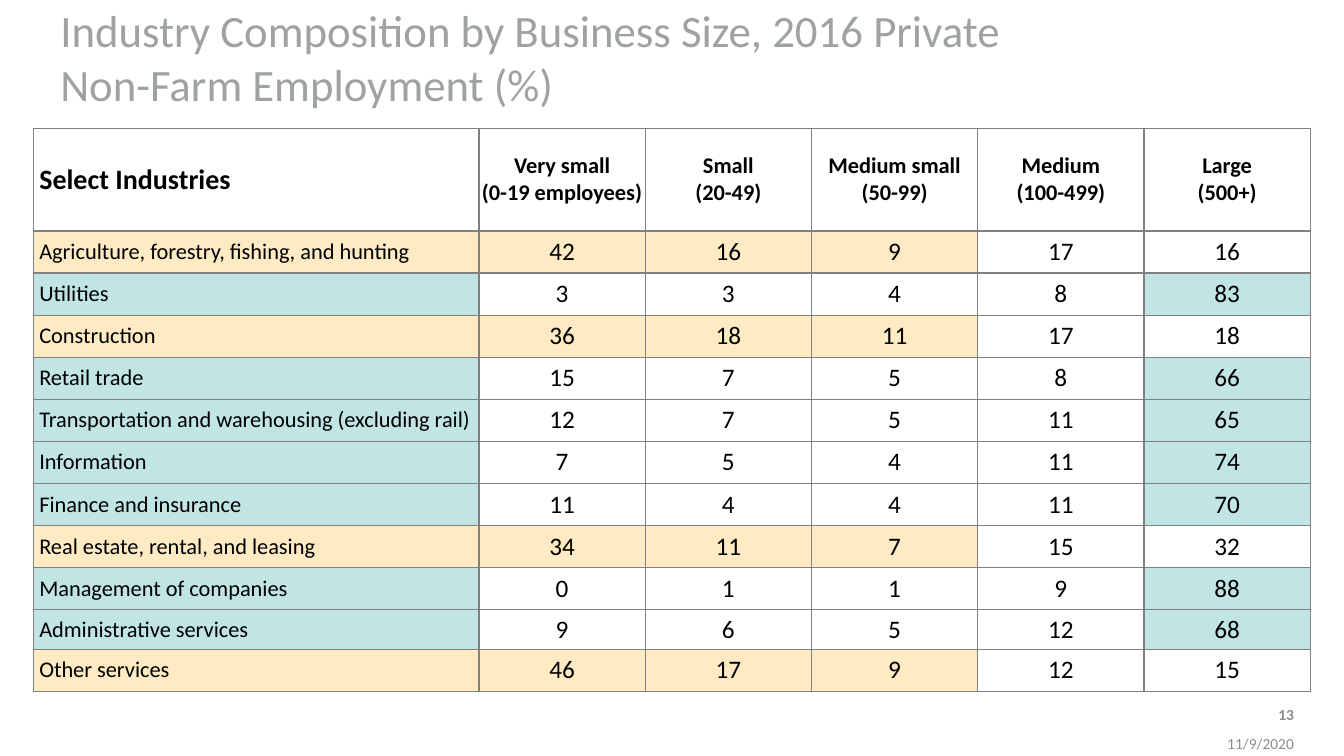
from dataclasses import dataclass

from lxml import etree
from pptx import Presentation
from pptx.dml.color import RGBColor
from pptx.enum import text
from pptx.oxml import ns
from pptx.util import Cm, Pt


@dataclass(frozen=True)
class Theme:
    font: str = "Calibri"
    title: str = "9EA2A2"
    footer: str = "8C8C8C"
    ink: str = "000000"
    border: str = "808080"
    plain: str = "FFFFFF"
    small_led: str = "FEEAC3"
    large_led: str = "C1E5E5"
    title_size: int = 32
    corner_size: int = 20
    label_size: int = 16
    value_size: int = 18
    footer_size: int = 11


THEME = Theme()
LEFT, CENTER, RIGHT = text.PP_ALIGN.LEFT, text.PP_ALIGN.CENTER, text.PP_ALIGN.RIGHT

HEADERS = ["Select Industries", "Very small\n(0-19 employees)", "Small\n(20-49)",
           "Medium small\n(50-99)", "Medium\n(100-499)", "Large\n(500+)"]
INDUSTRIES = [
    ("Agriculture, forestry, fishing, and hunting", 42, 16, 9, 17, 16),
    ("Utilities", 3, 3, 4, 8, 83),
    ("Construction", 36, 18, 11, 17, 18),
    ("Retail trade", 15, 7, 5, 8, 66),
    ("Transportation and warehousing (excluding rail)", 12, 7, 5, 11, 65),
    ("Information", 7, 5, 4, 11, 74),
    ("Finance and insurance", 11, 4, 4, 11, 70),
    ("Real estate, rental, and leasing", 34, 11, 7, 15, 32),
    ("Management of companies", 0, 1, 1, 9, 88),
    ("Administrative services", 9, 6, 5, 12, 68),
    ("Other services", 46, 17, 9, 12, 15),
]
COLUMN_WIDTHS = [11.23] + [4.19] * 5
ROW_HEIGHTS = [2.59] + [1.06] * 9 + [1.0, 1.06]


def write(tf, words, size, color, align=LEFT, bold=False):
    tf.text = words
    for p in tf.paragraphs:
        p.alignment = align
        for r in p.runs:
            r.font.name = THEME.font
            r.font.size = Pt(size)
            r.font.bold = bold
            r.font.color.rgb = RGBColor.from_string(color)


def add_text(s, box, words, size, color, align=LEFT, bold=False):
    tf = s.shapes.add_textbox(*map(Cm, box)).text_frame
    tf.word_wrap = True
    tf.vertical_anchor = text.MSO_ANCHOR.MIDDLE
    tf.margin_bottom = 0
    write(tf, words, size, color, align, bold)


def add_borders(cell):
    tc_pr = cell._tc.get_or_add_tcPr()
    for side in ("lnL", "lnR", "lnT", "lnB"):
        line = etree.SubElement(tc_pr, ns.qn(f"a:{side}"), w=str(Pt(1)))
        fill = etree.SubElement(line, ns.qn("a:solidFill"))
        etree.SubElement(fill, ns.qn("a:srgbClr"), val=THEME.border)


def fill_cell(cell, words, size, color, align, bold):
    add_borders(cell)
    cell.fill.solid()
    cell.fill.fore_color.rgb = RGBColor.from_string(color)
    cell.vertical_anchor = text.MSO_ANCHOR.MIDDLE
    cell.margin_left = Cm(0.15) if align == LEFT else 0
    cell.margin_right = cell.margin_top = cell.margin_bottom = 0
    write(cell.text_frame, words, size, THEME.ink, align, bold)


def highlight(row, column):
    """Shade the label and the size classes that lead an industry's employment."""
    if row[-1] > 50:
        return THEME.large_led if column in (0, 5) else THEME.plain
    return THEME.small_led if column <= 3 else THEME.plain


def add_industry_table(s):
    frame = s.shapes.add_table(len(ROW_HEIGHTS), len(COLUMN_WIDTHS), Cm(0.84), Cm(3.23),
                               Cm(sum(COLUMN_WIDTHS)), Cm(sum(ROW_HEIGHTS)))
    table = frame.table
    table.horz_banding = False
    for column, width in zip(table.columns, COLUMN_WIDTHS):
        column.width = Cm(width)
    for row, height in zip(table.rows, ROW_HEIGHTS):
        row.height = Cm(height)

    for j, header in enumerate(HEADERS):
        size = THEME.label_size if j else THEME.corner_size
        fill_cell(table.cell(0, j), header, size, THEME.plain, CENTER if j else LEFT, True)
    for i, industry in enumerate(INDUSTRIES, 1):
        for j, value in enumerate(industry):
            size = THEME.value_size if j else THEME.label_size
            fill_cell(table.cell(i, j), str(value), size, highlight(industry, j),
                      CENTER if j else LEFT, False)


def main():
    prs = Presentation()
    prs.slide_width, prs.slide_height = Cm(33.87), Cm(19.05)
    s = prs.slides.add_slide(prs.slide_layouts[6])
    add_text(s, (1.27, 0.1, 25.86, 2.54),
             "Industry Composition by Business Size, 2016 Private Non-Farm Employment (%)",
             THEME.title_size, THEME.title)
    add_industry_table(s)
    add_text(s, (30.63, 17.6, 2.23, 0.69), "13", THEME.footer_size, THEME.footer, RIGHT, True)
    add_text(s, (28.93, 18.33, 3.93, 0.69), "11/9/2020", THEME.footer_size, THEME.footer, RIGHT)
    prs.save("out.pptx")


if __name__ == "__main__":
    main()
